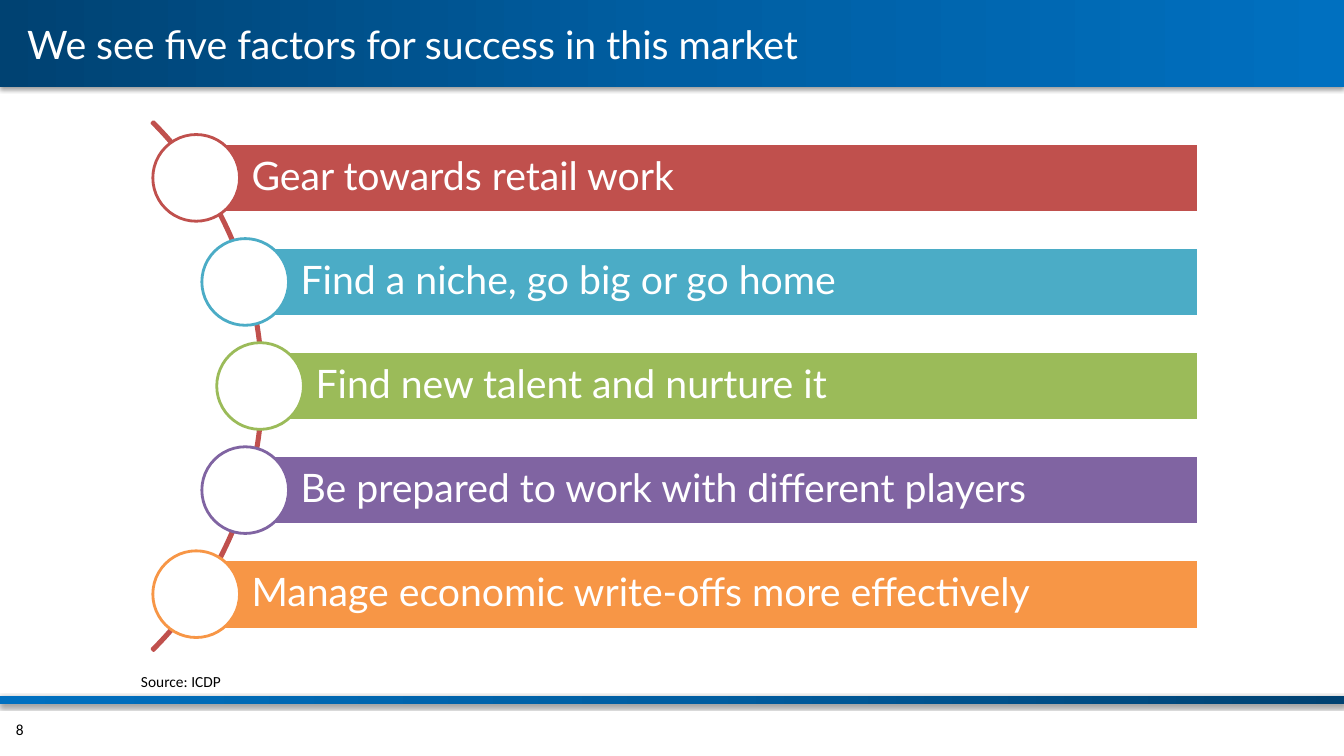
from copy import deepcopy
from math import sqrt

from lxml.etree import SubElement
from pptx import Presentation
from pptx.dml.color import RGBColor
from pptx.enum.shapes import MSO_SHAPE
from pptx.enum.text import MSO_ANCHOR, PP_ALIGN
from pptx.oxml.ns import qn
from pptx.util import Inches, Pt

# Content
TITLE = "We see five factors for success in this market"
FACTORS = [
    ("Gear towards retail work", "red"),
    ("Find a niche, go big or go home", "teal"),
    ("Find new talent and nurture it", "green"),
    ("Be prepared to work with different players", "purple"),
    ("Manage economic write-offs more effectively", "orange"),
]
SOURCE = "Source: ICDP"
PAGE_NUMBER = "8"

COLORS = {
    "white": "FFFFFF", "black": "000000",
    "navy": "004272", "blue": "005EA2", "bright": "0070C0",
    "red": "C0504D", "teal": "4BACC6", "green": "9BBB59",
    "purple": "8064A2", "orange": "F79646",
}

# Layout in inches
SLIDE_WIDTH, SLIDE_HEIGHT = 13.33, 7.5
HEADER_HEIGHT = 0.86
ARC_CENTER_X, ARC_CENTER_Y, ARC_SIZE = -1.1, 3.83, 7.42
MARKER_ORBIT, MARKER_SIZE = 3.68, 0.86
BAR_RIGHT, BAR_HEIGHT = 11.89, 0.69
ROW_STEP = 4.13 / 4


def color(name):
    return RGBColor.from_string(COLORS[name])


def add_shape(shapes, kind, left, top, width, height, fill=None, line=None):
    shape = shapes.add_shape(kind, Inches(left), Inches(top), Inches(width), Inches(height))
    shape.shadow.inherit = False
    if fill:
        shape.fill.solid()
        shape.fill.fore_color.rgb = color(fill)
    else:
        shape.fill.background()
    if line:
        shape.line.color.rgb = color(line)
        shape.line.width = Pt(2)
    else:
        shape.line.fill.background()
    return shape


def add_band(shapes, top, height, angle):
    band = add_shape(shapes, MSO_SHAPE.RECTANGLE, 0, top, SLIDE_WIDTH, height)
    band.fill.gradient()
    band.fill.gradient_angle = angle
    stop_list = band.element.find(".//" + qn("a:gsLst"))
    stop_list.insert(1, deepcopy(stop_list[0]))
    stops = zip(band.fill.gradient_stops, ("navy", "blue", "bright"), (0, 0.5, 1))
    for stop, name, position in stops:
        stop.color.rgb = color(name)
        stop.position = position
    # Soft shadow below the band
    effects = band.element.find(".//" + qn("a:effectLst"))
    shadow = SubElement(effects, qn("a:outerShdw"), blurRad="40000", dist="20000",
                        dir="5400000", rotWithShape="0")
    tint = SubElement(shadow, qn("a:srgbClr"), val=COLORS["black"])
    SubElement(tint, qn("a:alpha"), val="38000")


def write(shape, text, size, font_name, color_name):
    frame = shape.text_frame
    frame.vertical_anchor = MSO_ANCHOR.MIDDLE
    paragraph = frame.paragraphs[0]
    paragraph.alignment = PP_ALIGN.LEFT
    run = paragraph.add_run()
    run.text = text
    run.font.size = Pt(size)
    run.font.name = font_name
    run.font.color.rgb = color(color_name)
    return frame


def add_note(shapes, text, left, top, width, height, wrap):
    box = shapes.add_textbox(Inches(left), Inches(top), Inches(width), Inches(height))
    write(box, text, 11, "Calibri", "black").word_wrap = wrap


def add_factor(shapes, row, text, color_name):
    # Markers sit on a circle around the arc's centre
    offset = (row - (len(FACTORS) - 1) / 2) * ROW_STEP
    x = ARC_CENTER_X + sqrt(MARKER_ORBIT ** 2 - offset ** 2)
    y = ARC_CENTER_Y + offset
    bar = add_shape(shapes, MSO_SHAPE.RECTANGLE, x, y - BAR_HEIGHT / 2,
                    BAR_RIGHT - x, BAR_HEIGHT, color_name, "white")
    frame = write(bar, text, 28, "Lato", "white")
    frame.word_wrap = True
    frame.margin_left = Inches(0.55)
    frame.margin_right = frame.margin_top = frame.margin_bottom = Inches(0.08)
    frame.paragraphs[0].line_spacing = 0.9
    add_shape(shapes, MSO_SHAPE.OVAL, x - MARKER_SIZE / 2, y - MARKER_SIZE / 2,
              MARKER_SIZE, MARKER_SIZE, "white", color_name)


def main():
    presentation = Presentation()
    presentation.slide_width = Inches(SLIDE_WIDTH)
    presentation.slide_height = Inches(SLIDE_HEIGHT)
    slide = presentation.slides.add_slide(presentation.slide_layouts[5])
    shapes = slide.shapes

    # Header and footer bands
    add_band(shapes, 0, HEADER_HEIGHT, 0)
    add_band(shapes, 6.9, 0.08, 180)

    # Title, brought in front of the header band
    title = shapes.title
    title.left, title.top = Inches(0.17), Inches(0)
    title.width, title.height = Inches(12.99), Inches(HEADER_HEIGHT)
    write(title, TITLE, 28, "Lato", "white")
    title.element.getparent().append(title.element)

    add_note(shapes, PAGE_NUMBER, 0.06, 7.09, 0.79, 0.3, True)

    # Arc with the five factors
    diagram = shapes.add_group_shape().shapes
    arc = add_shape(diagram, MSO_SHAPE.BLOCK_ARC, ARC_CENTER_X - ARC_SIZE / 2,
                    ARC_CENTER_Y - ARC_SIZE / 2, ARC_SIZE, ARC_SIZE, line="red")
    for index, value in enumerate((189, 27, 0.003)):
        arc.adjustments[index] = value
    for row, (text, color_name) in enumerate(FACTORS):
        add_factor(diagram, row, text, color_name)

    add_note(shapes, SOURCE, 1.3, 6.61, 1, 0.29, False)
    presentation.save("out.pptx")


if __name__ == "__main__":
    main()
